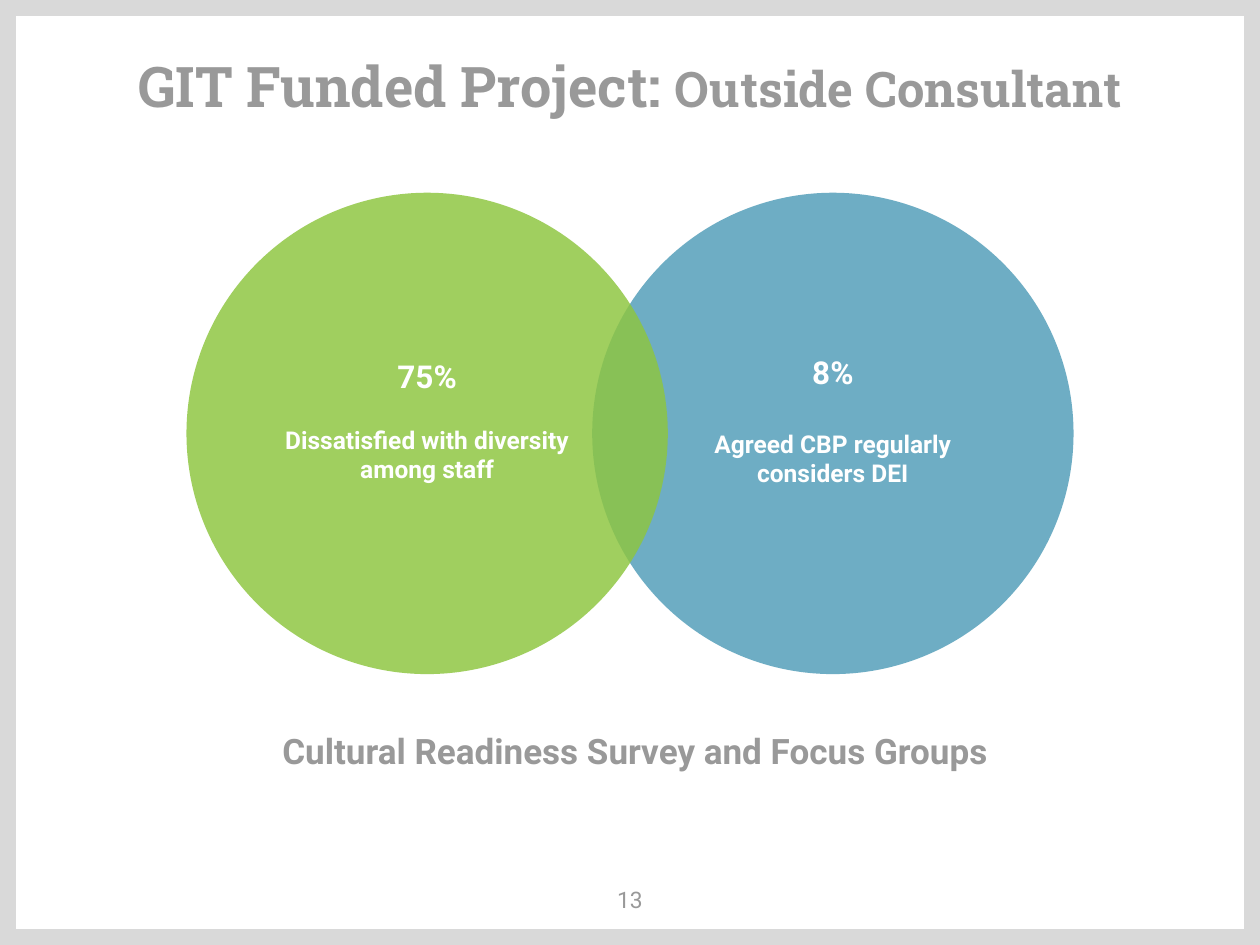
from dataclasses import dataclass

import pptx
import pptx.dml.color
import pptx.enum.shapes
import pptx.enum.text
import pptx.oxml.ns
import pptx.util
from lxml import etree

Inches, Pt = pptx.util.Inches, pptx.util.Pt
SHAPE = pptx.enum.shapes.MSO_SHAPE
ALIGN = pptx.enum.text.PP_ALIGN
ANCHOR = pptx.enum.text.MSO_ANCHOR
qn = pptx.oxml.ns.qn

COLORS = {
    "frame": "D9D9D9",
    "gray": "999999",
    "white": "FFFFFF",
    "blue": "539EB9",
    "green": "8EC641",
}


@dataclass
class Finding:
    left: float
    fill: str
    share: str
    label: str
    gap: float


FINDINGS = [
    Finding(4.7, "blue", "8%", "Agreed CBP regularly considers DEI", 22),
    Finding(1.48, "green", "75%", "Dissatisfied with diversity among staff", 17),
]
DIAMETER = 3.82


def rgb(name: str) -> pptx.dml.color.RGBColor:
    return pptx.dml.color.RGBColor.from_string(COLORS[name])


def place(sp, left: float, top: float, width: float, height: float) -> None:
    sp.left, sp.top = Inches(left), Inches(top)
    sp.width, sp.height = Inches(width), Inches(height)


def setup_frame(tf, anchor, bottom: float = 0.1) -> None:
    tf.word_wrap = True
    tf.auto_size = pptx.enum.text.MSO_AUTO_SIZE.NONE
    tf.vertical_anchor = anchor
    tf.margin_left = tf.margin_right = tf.margin_top = Inches(0.1)
    tf.margin_bottom = Inches(bottom)


def add_text(p, text: str, *, size: float, color: str = "gray", font: str = "Roboto",
             bold: bool = True, align=ALIGN.CENTER, before: float = 0) -> None:
    p.alignment = align
    p.space_before = Pt(before)
    r = p.add_run()
    r.text = text
    r.font.name, r.font.size, r.font.bold = font, Pt(size), bold
    r.font.color.rgb = rgb(color)


def add_circle(s, finding: Finding) -> None:
    sp = s.shapes.add_shape(SHAPE.OVAL, Inches(finding.left), Inches(1.53),
                            Inches(DIAMETER), Inches(DIAMETER))
    sp.shadow.inherit = False
    sp.fill.solid()
    sp.fill.fore_color.rgb = rgb(finding.fill)
    color = sp.fill._xPr.find(qn("a:solidFill"))[0]
    etree.SubElement(color, qn("a:alpha")).set("val", "84000")
    sp.line.fill.background()
    tf = sp.text_frame
    setup_frame(tf, ANCHOR.MIDDLE, bottom=0.31)
    add_text(tf.paragraphs[0], finding.share, size=18, color="white")
    add_text(tf.add_paragraph(), finding.label, size=14, color="white", before=finding.gap)


def main() -> None:
    prs = pptx.Presentation()
    prs.slide_width, prs.slide_height = Inches(10), Inches(7.5)
    s = prs.slides.add_slide(prs.slide_layouts[1])

    # Border around the slide
    sp = s.shapes.add_shape(SHAPE.RECTANGLE, 0, 0, prs.slide_width, prs.slide_height)
    sp.shadow.inherit = False
    sp.fill.background()
    sp.line.color.rgb = rgb("frame")
    sp.line.width = Pt(18)

    # Title
    title = s.shapes.title
    place(title, 0.5, 0.3, 9, 0.74)
    setup_frame(title.text_frame, ANCHOR.BOTTOM)
    p = title.text_frame.paragraphs[0]
    add_text(p, "GIT Funded Project: ", size=32, font="Roboto Slab")
    add_text(p, "Outside Consultant", size=28, font="Roboto Slab")

    # Caption under the circles
    body = s.placeholders[1]
    place(body, 1.64, 5.35, 6.72, 0.87)
    setup_frame(body.text_frame, ANCHOR.BOTTOM)
    p = body.text_frame.paragraphs[0]
    pPr = p._p.get_or_add_pPr()
    pPr.set("marL", str(Inches(0.5)))
    pPr.set("indent", "0")
    etree.SubElement(pPr, qn("a:buNone"))
    add_text(p, "Cultural Readiness Survey and Focus Groups", size=20, align=ALIGN.LEFT)

    # Page number
    sp = s.shapes.add_textbox(Inches(4.75), Inches(6.93), Inches(0.5), Inches(0.57))
    setup_frame(sp.text_frame, ANCHOR.TOP)
    add_text(sp.text_frame.paragraphs[0], "13", size=13, bold=False)

    # Overlapping circles
    for finding in FINDINGS:
        add_circle(s, finding)

    prs.save("out.pptx")


if __name__ == "__main__":
    main()
